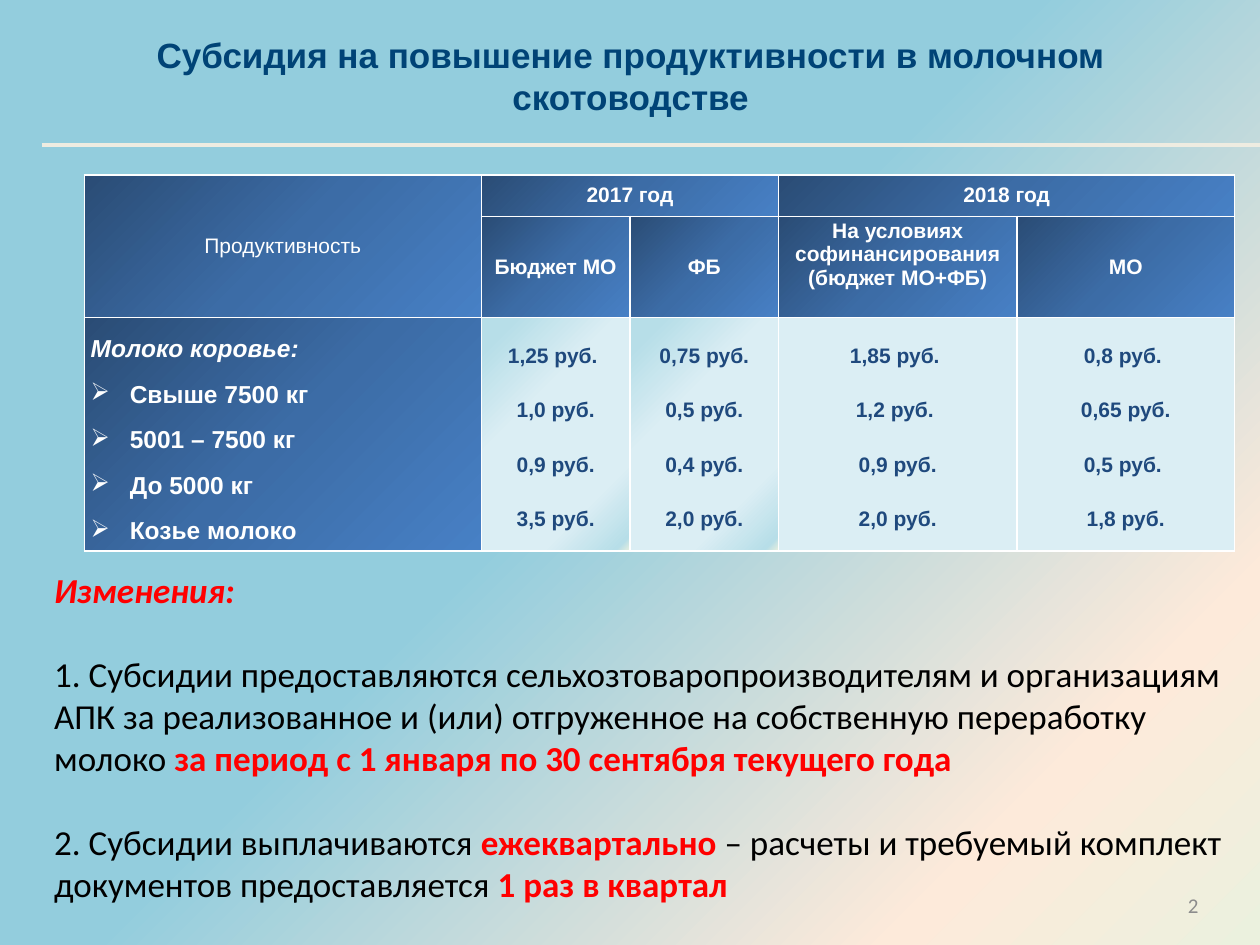
from lxml import etree
from pptx import Presentation
from pptx.dml.color import RGBColor
from pptx.enum.shapes import MSO_CONNECTOR
from pptx.enum.text import MSO_ANCHOR, MSO_AUTO_SIZE, PP_ALIGN
from pptx.oxml.ns import qn
from pptx.util import Inches, Pt

LEFT, MID, RIGHT = PP_ALIGN.LEFT, PP_ALIGN.CENTER, PP_ALIGN.RIGHT
TOP, CENTRE = MSO_ANCHOR.TOP, MSO_ANCHOR.MIDDLE
WIDE, HIGH = Inches(10), Inches(7.5)

WHITE, RED, BLACK, NAVY = "FFFFFF", "FF0000", "000000", "1F497D"
BACK = [(11, "93CDDD"), (47, "93CDDD"), (83, "FDEADA"), (100, "EBF1DE")]
DARK = [(0, "2A4C75"), (50, "3C6CA6"), (100, "4780C5")]
PALE = [(9, "B7DEE8"), (36, "DBEEF4"), (77, "DBEEF4"), (96, "B7DEE8"),
        (100, "EBF1DE")]
FLAT = "DBEEF4"

COLS = [31.5, 11.8, 11.8, 18.9, 17.3]
ROWS = [4.4, 10.7, 24.7]
HEADS = [
    (0, 0, "Продуктивность"), (0, 1, "2017 год"), (0, 3, "2018 год"),
    (1, 1, "Бюджет МО"), (1, 2, "ФБ"),
    (1, 3, "На условиях софинансирования (бюджет МО+ФБ)"), (1, 4, "МО"),
]
YIELDS = ["Молоко коровье:", "Свыше 7500 кг", "5001 – 7500 кг",
          "До 5000 кг", "Козье молоко"]
RATES = [
    ["1,25 руб. ", "1,0 руб.", "0,9 руб.", "3,5 руб."],
    ["0,75 руб.", "0,5 руб.", "0,4 руб.", "2,0 руб."],
    ["1,85 руб. ", "1,2 руб. ", "0,9 руб.", "2,0 руб."],
    ["0,8 руб. ", "0,65 руб.", "0,5 руб. ", "1,8 руб."],
]
# Each paragraph is a list of parts that alternate plain and stressed
NOTES = [
    ["", "Изменения:"],
    ["1. Субсидии предоставляются сельхозтоваропроизводителям и организациям "
     "АПК за реализованное и (или) отгруженное на собственную переработку "
     "молоко ", "за период с 1 января по 30 сентября текущего года"],
    ["2. Субсидии выплачиваются ", "ежеквартально",
     " – расчеты и требуемый комплект документов предоставляется ",
     "1 раз в квартал"],
]


def tint(code):
    return RGBColor.from_string(code)


def across(share):
    return int(WIDE * share / 100)


def down(share):
    return int(HIGH * share / 100)


def place(shape, x, y, w, h):
    """Set a shape's box in percent of the slide."""
    shape.left, shape.top = across(x), down(y)
    shape.width, shape.height = across(w), down(h)


def ink(run, name, size, code, bold=False, slant=False):
    font = run.font
    font.name, font.size = name, Pt(size)
    font.bold, font.italic = bold, slant
    font.color.rgb = tint(code)


def add(node, tag, **attrs):
    child = etree.SubElement(node, qn(tag))
    for key, value in attrs.items():
        child.set(key, str(value))
    return child


def shade(fill, root, stops, round=False):
    """Give a fill a gradient: diagonal, or spreading from the top left."""
    fill.gradient()
    grad = next(root.iter(qn("a:gradFill")))
    for child in list(grad):
        grad.remove(child)
    row = add(grad, "a:gsLst")
    for share, code in stops:
        add(add(row, "a:gs", pos=share * 1000), "a:srgbClr", val=code)
    if round:
        way = add(grad, "a:path", path="circle")
        add(way, "a:fillToRect", r=100000, b=100000)
    else:
        add(grad, "a:lin", ang=45 * 60000, scaled=0)


def indent(para, depth, mark=None):
    props = para._p.get_or_add_pPr()
    props.set("marL", str(Inches(depth)))
    props.set("indent", str(-Inches(depth)))
    if mark:
        add(props, "a:buChar", char=mark)
    else:
        add(props, "a:buNone")


def frame(cell):
    props = cell._tc.get_or_add_tcPr()
    for side in "LRTB":
        edge = add(props, f"a:ln{side}", w=Pt(1))
        add(add(edge, "a:solidFill"), "a:srgbClr", val=WHITE)


def write(cell, lines, size, code, align, gap=0, step=1.0, bold=True):
    """Fill a cell with paragraphs that stand gap points apart."""
    text = cell.text_frame
    text.text = "\n".join(lines)
    for para in text.paragraphs:
        para.alignment, para.line_spacing = align, step
        ink(para.runs[0], "Arial", size, code, bold)
    for para in text.paragraphs[:-1]:
        para.space_after = Pt(gap)
    return text.paragraphs


def add_grid(slide):
    shape = slide.shapes.add_table(
        len(ROWS), len(COLS), across(6.7), down(18.5),
        across(sum(COLS)), down(sum(ROWS)))
    grid = shape.table
    for col, share in zip(grid.columns, COLS):
        col.width = across(share)
    for row, share in zip(grid.rows, ROWS):
        row.height = down(share)
    for r in range(len(ROWS)):
        for c in range(len(COLS)):
            cell = grid.cell(r, c)
            cell.margin_left = cell.margin_right = Inches(0.05)
            cell.margin_top = cell.margin_bottom = 0
            cell.vertical_anchor = CENTRE if r < 2 else TOP
            frame(cell)
            if r < 2 or c == 0:
                shade(cell.fill, cell._tc, DARK)
            elif c < 3:
                shade(cell.fill, cell._tc, PALE, round=True)
            else:
                cell.fill.solid()
                cell.fill.fore_color.rgb = tint(FLAT)
    for first, last in [((0, 0), (1, 0)), ((0, 1), (0, 2)), ((0, 3), (0, 4))]:
        grid.cell(*first).merge(grid.cell(*last))
    for r, c, text in HEADS:
        write(grid.cell(r, c), [text], 12, WHITE, MID, bold=c > 0)
    grid.cell(1, 3).margin_bottom = Inches(0.2)

    cell = grid.cell(2, 0)
    cell.margin_top = Pt(13)
    paras = write(cell, YIELDS, 14, WHITE, LEFT, gap=13, step=Pt(13))
    paras[0].runs[0].font.italic = True
    for para in paras[1:]:
        indent(para, 0.31, "➢")
    for c, rates in enumerate(RATES, 1):
        cell = grid.cell(2, c)
        cell.margin_top = Pt(13.5)
        write(cell, rates, 12, NAVY, MID, gap=15.5, step=1.15)


def add_title(slide):
    title = slide.shapes.title
    place(title, 2, 2.8, 96.1, 10.3)
    title.text_frame.text = "Субсидия на повышение продуктивности в молочном скотоводстве"
    para = title.text_frame.paragraphs[0]
    para.alignment = MID
    ink(para.runs[0], "Arial", 20, "004376", bold=True)


def add_rule(slide):
    rule = slide.shapes.add_connector(
        MSO_CONNECTOR.STRAIGHT, across(3.3), down(15.3), WIDE, down(15.3))
    rule.line.color.rgb = tint("EEECE1")
    rule.line.width = Pt(2.25)
    add(rule._element.spPr, "a:effectLst")


def add_notes(slide):
    body = slide.placeholders[1]
    place(body, 3.3, 59.5, 95.5, 37.2)
    text = body.text_frame
    text.auto_size = MSO_AUTO_SIZE.NONE
    for n, parts in enumerate(NOTES):
        para = text.paragraphs[0] if n == 0 else text.add_paragraph()
        para.space_before, para.space_after = Pt(0), Pt(24)
        indent(para, 0)
        for k, part in enumerate(parts):
            if part:
                run = para.add_run()
                run.text = part
                ink(run, "Calibri", 20, RED if k % 2 else BLACK,
                    bold=k % 2 == 1, slant=n == 0)


def add_number(slide):
    box = slide.shapes.add_textbox(0, 0, 0, 0)
    place(box, 72.8, 93.1, 23.3, 5.3)
    text = box.text_frame
    text.word_wrap, text.vertical_anchor = True, CENTRE
    text.text = "2"
    text.paragraphs[0].alignment = RIGHT
    ink(text.paragraphs[0].runs[0], "Calibri", 12, "8C8C8C")


def main():
    deck = Presentation()
    deck.slide_width, deck.slide_height = WIDE, HIGH
    slide = deck.slides.add_slide(deck.slide_layouts[1])
    shade(slide.background.fill, slide.element, BACK)
    add_title(slide)
    add_rule(slide)
    add_grid(slide)
    add_number(slide)
    add_notes(slide)
    deck.save("out.pptx")


if __name__ == "__main__":
    main()
